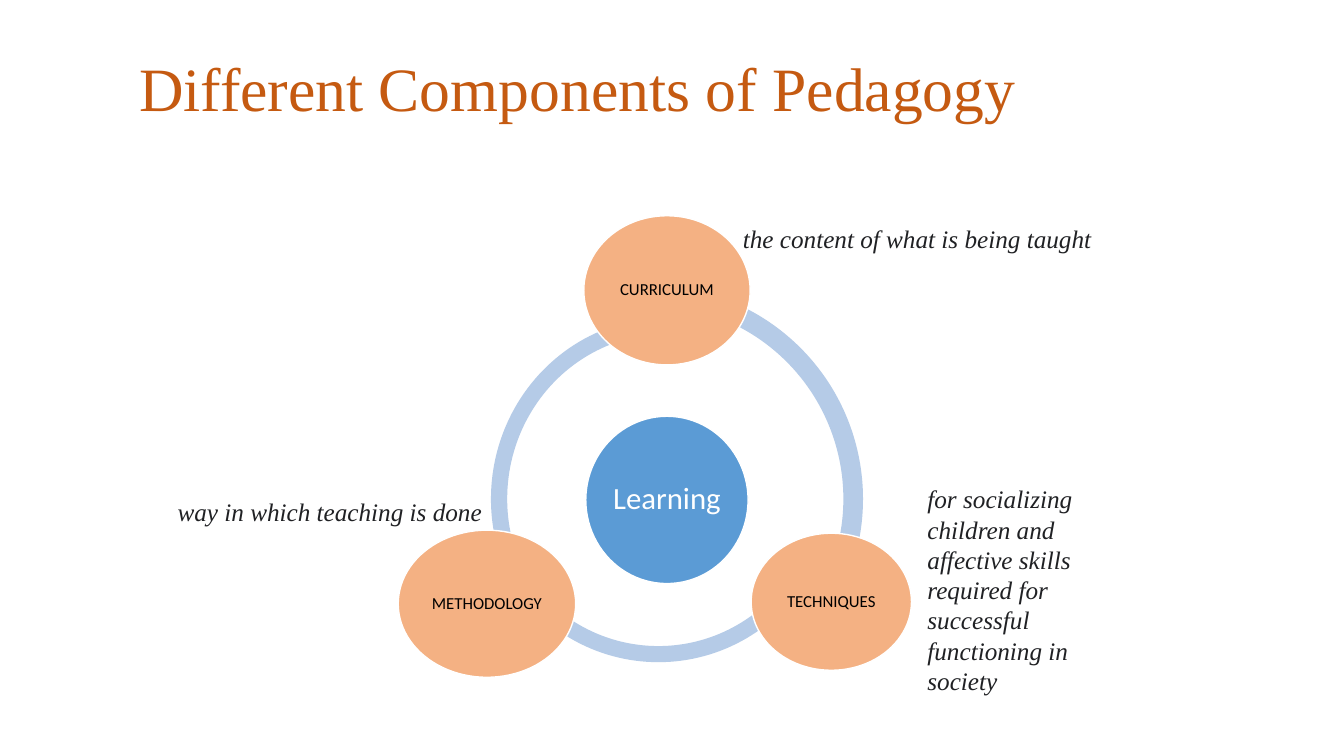
"""Build the slide on the different components of pedagogy."""
from pptx import Presentation
from pptx.dml.color import RGBColor
from pptx.enum import shapes, text
from pptx.util import Inches, Pt

RUST = RGBColor(0xC5, 0x5A, 0x11)
PALE_BLUE = RGBColor(0xB5, 0xCB, 0xE7)
BLUE = RGBColor(0x5B, 0x9B, 0xD5)
PEACH = RGBColor(0xF4, 0xB1, 0x83)
WHITE = RGBColor(0xFF, 0xFF, 0xFF)
BLACK = RGBColor(0, 0, 0)
INK = RGBColor(0x20, 0x21, 0x24)
SERIF, SANS = "Times New Roman", "Calibri"
LEFT, CENTER, RIGHT, JUSTIFY = (
    text.PP_ALIGN.LEFT, text.PP_ALIGN.CENTER, text.PP_ALIGN.RIGHT, text.PP_ALIGN.JUSTIFY)
MIDDLE, TOP = text.MSO_ANCHOR.MIDDLE, text.MSO_ANCHOR.TOP
ANGLE_UNIT = 0.6


def write(sp, words, color, font, align=LEFT, anchor=MIDDLE, spacing=0.9):
    tf = sp.text_frame
    frame = {"word_wrap": True, "auto_size": text.MSO_AUTO_SIZE.NONE, "vertical_anchor": anchor}
    for name, value in frame.items():
        setattr(tf, name, value)
    p = tf.paragraphs[0]
    p.alignment, p.line_spacing = align, spacing
    r = p.add_run()
    r.text = words
    for name, value in font.items():
        setattr(r.font, name, value)
    r.font.color.rgb = color


def add_filled(kind, box, color):
    sp = s.shapes.add_shape(kind, *map(Inches, box))
    sp.shadow.inherit = False
    sp.fill.solid()
    sp.fill.fore_color.rgb = color
    sp.line.fill.background()
    return sp


prs = Presentation()
prs.slide_width, prs.slide_height = Inches(13.33), Inches(7.5)
s = prs.slides.add_slide(prs.slide_layouts[5])

title = s.shapes.title
title.left, title.top, title.width, title.height = map(Inches, (1.28, 0.18, 9.56, 1.45))
write(title, "Different Components of Pedagogy", RUST, {"name": SERIF, "size": Pt(44)})

arcs = [
    ((4.87, 3.15, 3.5, 3.6), 160, 270),
    ((4.79, 3.06, 3.48, 3.51), 20, 135),
    ((4.32, 2.83, 4.24, 4.24), -90, 18),
]
for box, start, end in arcs:
    arc = add_filled(shapes.MSO_SHAPE.BLOCK_ARC, box, PALE_BLUE)
    for i, value in enumerate((start % 360 * ANGLE_UNIT, end * ANGLE_UNIT, 0.046)):
        arc.adjustments[i] = value

circles = [
    ("Learning", (5.81, 4.13, 1.61, 1.66), BLUE, WHITE, 22, 0.03),
    ("CURRICULUM", (5.79, 2.14, 1.65, 1.48), PEACH, BLACK, 12, 0.02),
    ("TECHNIQUES", (7.45, 5.29, 1.59, 1.36), PEACH, BLACK, 12, 0.02),
    ("METHODOLOGY", (3.95, 5.26, 1.76, 1.46), PEACH, BLACK, 12, 0.02),
]
for words, box, fill, color, size, inset in circles:
    circle = add_filled(shapes.MSO_SHAPE.OVAL, box, fill)
    circle.line.color.rgb = WHITE
    circle.line.width = Pt(1)
    for side in ("left", "top", "right", "bottom"):
        setattr(circle.text_frame, f"margin_{side}", Inches(inset))
    write(circle, words, color, {"name": SANS, "size": Pt(size)}, CENTER)

notes = [
    ("the content of what is being taught", (7.27, 2.17, 4.4, 0.4), JUSTIFY),
    ("way in which teaching is done", (1.56, 4.87, 3.32, 0.4), RIGHT),
    ("for socializing children and affective skills required for successful "
     "functioning in society", (9.1, 4.75, 2.29, 2.22), LEFT),
]
for words, box, align in notes:
    note = s.shapes.add_textbox(*map(Inches, box))
    write(note, words, INK, {"name": SERIF, "size": Pt(18), "italic": True}, align, TOP, 1.0)

prs.save("out.pptx")
